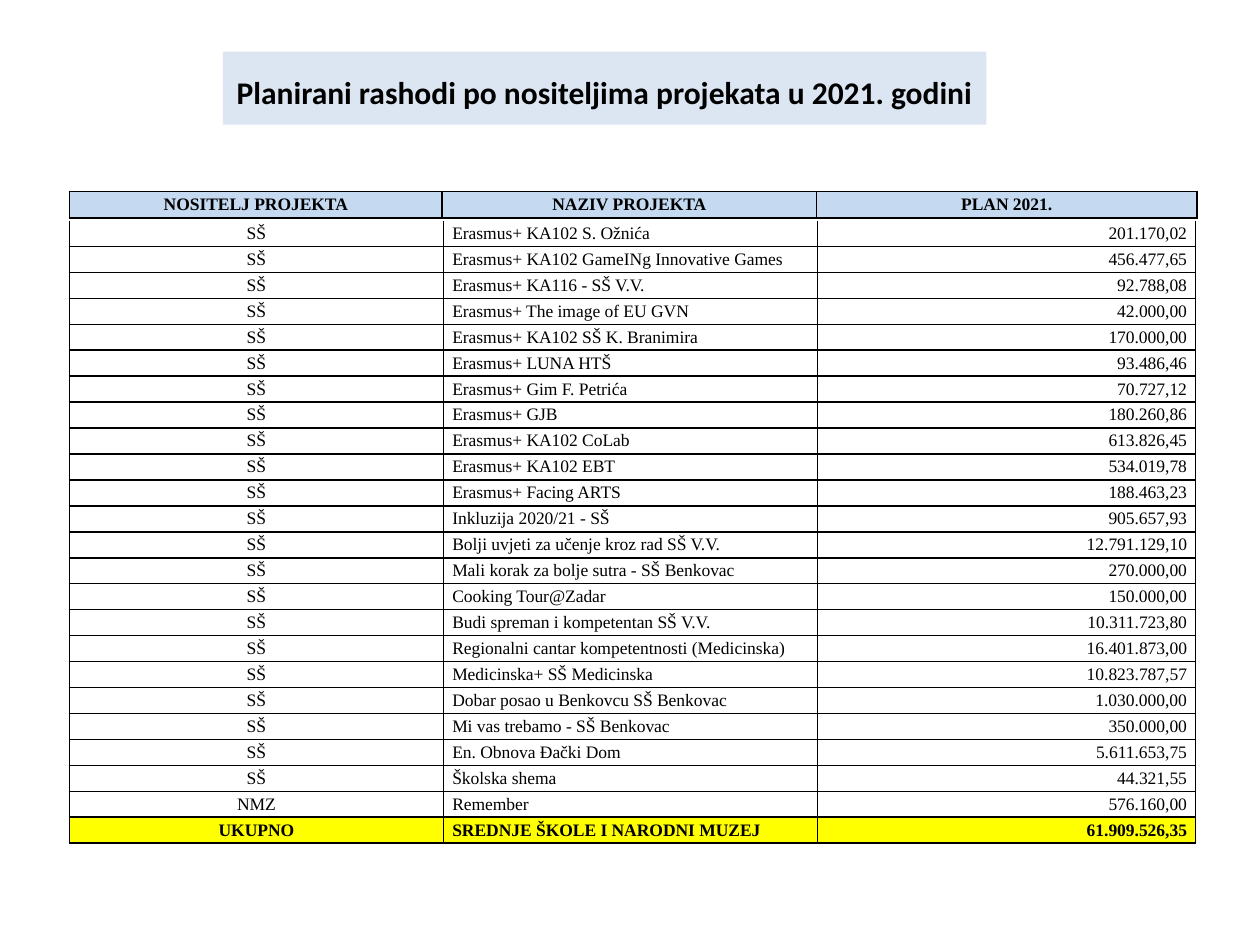
from pptx import Presentation
from pptx.dml.color import RGBColor
from pptx.enum.shapes import MSO_SHAPE
from pptx.enum.text import MSO_ANCHOR, PP_ALIGN
from pptx.oxml.ns import qn
from pptx.util import Inches, Pt
from lxml.etree import SubElement

COLORS = {
    "text": "000000",
    "border": "000000",
    "title": "DCE6F2",
    "header": "C5D9F1",
    "holder": "FFFFFF",
    "total": "FFFF00",
}

TITLE = "Planirani rashodi po nositeljima projekata u 2021. godini"
HEADINGS = ("NOSITELJ PROJEKTA", "NAZIV PROJEKTA", "PLAN 2021.")
SCHOOL_PROJECTS = [
    ("Erasmus+ KA102 S. Ožnića", "201.170,02"),
    ("Erasmus+ KA102 GameINg Innovative Games", "456.477,65"),
    ("Erasmus+ KA116 - SŠ V.V.", "92.788,08"),
    ("Erasmus+ The image of EU GVN", "42.000,00"),
    ("Erasmus+ KA102 SŠ K. Branimira", "170.000,00"),
    ("Erasmus+ LUNA HTŠ", "93.486,46"),
    ("Erasmus+ Gim F. Petrića", "70.727,12"),
    ("Erasmus+ GJB", "180.260,86"),
    ("Erasmus+ KA102 CoLab", "613.826,45"),
    ("Erasmus+ KA102 EBT", "534.019,78"),
    ("Erasmus+ Facing ARTS", "188.463,23"),
    ("Inkluzija 2020/21 - SŠ", "905.657,93"),
    ("Bolji uvjeti za učenje kroz rad SŠ V.V.", "12.791.129,10"),
    ("Mali korak za bolje sutra - SŠ Benkovac", "270.000,00"),
    ("Cooking Tour@Zadar", "150.000,00"),
    ("Budi spreman i kompetentan SŠ V.V.", "10.311.723,80"),
    ("Regionalni cantar kompetentnosti (Medicinska)", "16.401.873,00"),
    ("Medicinska+ SŠ Medicinska", "10.823.787,57"),
    ("Dobar posao u Benkovcu SŠ Benkovac", "1.030.000,00"),
    ("Mi vas trebamo - SŠ Benkovac", "350.000,00"),
    ("En. Obnova Đački Dom", "5.611.653,75"),
    ("Školska shema", "44.321,55"),
]
MUSEUM_PROJECT = ("NMZ", "Remember", "576.160,00")
TOTAL = ("UKUPNO", "SREDNJE ŠKOLE I NARODNI MUZEJ", "61.909.526,35")


def rgb(name):
    return RGBColor.from_string(COLORS[name])


def write_text(frame, text, *, font="Times New Roman", size=10, bold=False,
               align=PP_ALIGN.LEFT):
    paragraph = frame.paragraphs[0]
    paragraph.alignment = align
    run = paragraph.add_run()
    run.text = text
    run.font.name = font
    run.font.size = Pt(size)
    run.font.bold = bold
    run.font.color.rgb = rgb("text")


def set_borders(cell, open_top=False):
    properties = cell._tc.get_or_add_tcPr()
    for side in "LRTB":
        line = SubElement(properties, qn(f"a:ln{side}"), w=str(Pt(1)))
        if side == "T" and open_top:
            SubElement(line, qn("a:noFill"))
        else:
            fill = SubElement(line, qn("a:solidFill"))
            SubElement(fill, qn("a:srgbClr"), val=COLORS["border"])


def format_cell(cell, text, *, fill=None, open_top=False, **text_format):
    cell.margin_left = cell.margin_right = Inches(0.07)
    cell.margin_top = cell.margin_bottom = 0
    cell.vertical_anchor = MSO_ANCHOR.MIDDLE
    set_borders(cell, open_top)
    if fill:
        cell.fill.solid()
        cell.fill.fore_color.rgb = rgb(fill)
    else:
        cell.fill.background()
    write_text(cell.text_frame, text, **text_format)


def add_grid(slide, top, height, row_count, widths):
    table = slide.shapes.add_table(
        row_count, len(widths), Inches(0.55), Inches(top),
        Inches(sum(widths)), Inches(height)).table
    table.first_row = table.horz_banding = False
    for column, width in zip(table.columns, widths):
        column.width = Inches(width)
    for row in table.rows:
        row.height = Inches(height / row_count)
    return table


def add_title(slide):
    title = slide.shapes.add_shape(
        MSO_SHAPE.RECTANGLE, Inches(1.77), Inches(0.41), Inches(6.06), Inches(0.58))
    title.shadow.inherit = False
    title.fill.solid()
    title.fill.fore_color.rgb = rgb("title")
    title.line.fill.background()
    frame = title.text_frame
    frame.word_wrap = False
    frame.vertical_anchor = MSO_ANCHOR.MIDDLE
    frame.margin_top, frame.margin_bottom = Inches(0.1), Inches(0.04)
    write_text(frame, TITLE, font="Calibri", size=18, bold=True,
               align=PP_ALIGN.CENTER)


def add_projects(slide):
    projects = [("SŠ", *project) for project in SCHOOL_PROJECTS]
    projects += [MUSEUM_PROJECT, TOTAL]
    table = add_grid(slide, 1.75, 4.95, len(projects), (2.97, 2.97, 3))
    aligns = (PP_ALIGN.CENTER, PP_ALIGN.LEFT, PP_ALIGN.RIGHT)
    for r, project in enumerate(projects):
        is_total = project is TOTAL
        fills = ("total",) * 3 if is_total else ("holder", None, None)
        for c, text in enumerate(project):
            format_cell(table.cell(r, c), text, fill=fills[c], open_top=r == 0,
                        bold=is_total, align=aligns[c])


def add_headings(slide):
    table = add_grid(slide, 1.52, 0.21, 1, (2.96, 2.97, 3.02))
    for c, heading in enumerate(HEADINGS):
        format_cell(table.cell(0, c), heading, fill="header", bold=True,
                    align=PP_ALIGN.CENTER)


def main():
    presentation = Presentation()
    presentation.slide_width = Inches(10)
    presentation.slide_height = Inches(7.5)
    slide = presentation.slides.add_slide(presentation.slide_layouts[6])

    # Title band
    add_title(slide)
    # Planned spending per project, with its separate heading row
    add_projects(slide)
    add_headings(slide)

    presentation.save("out.pptx")


if __name__ == "__main__":
    main()
